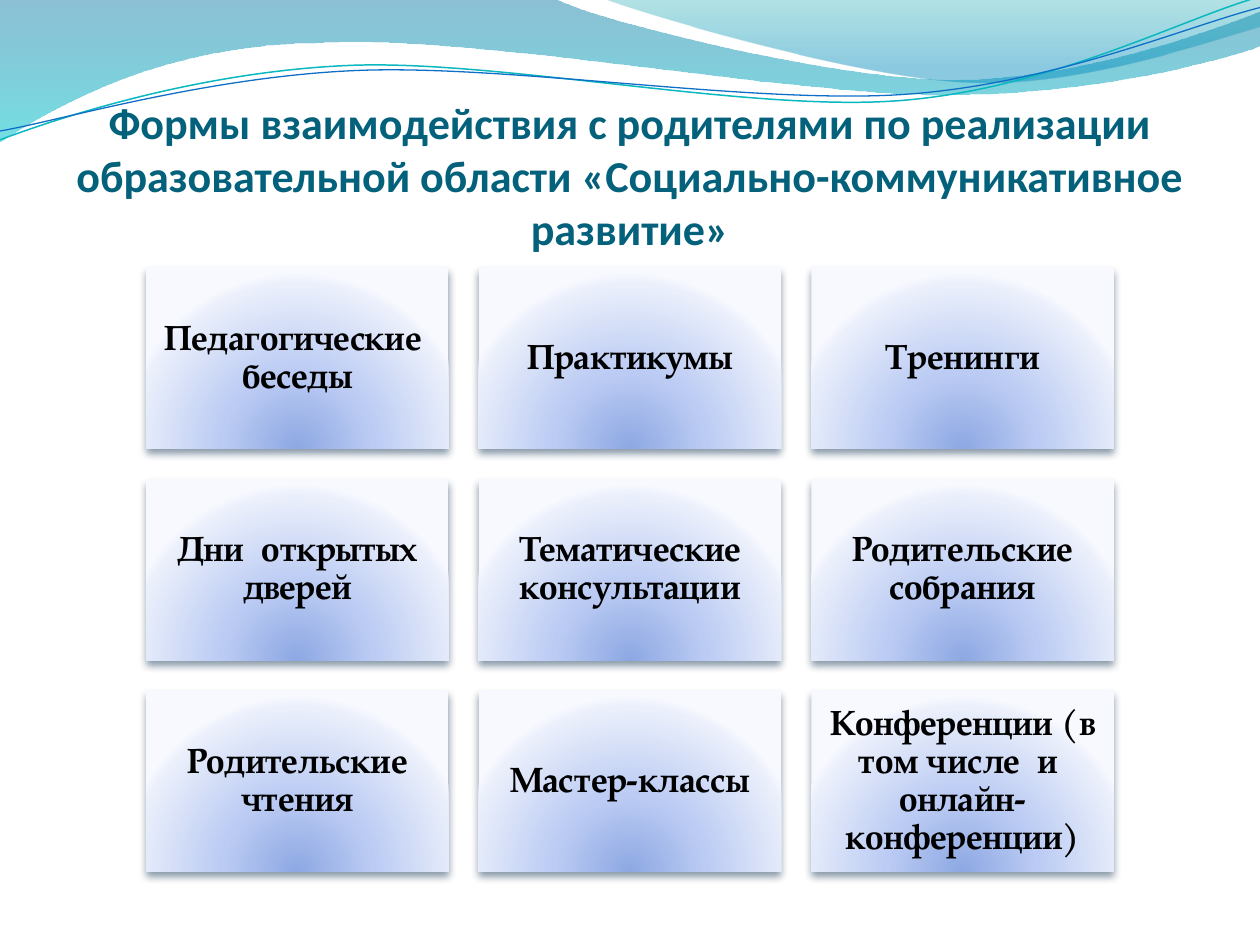
"""Build a slide of nine forms of cooperation with parents under a wave banner."""
import lxml.etree
import pptx
import pptx.dml.color
import pptx.enum.shapes
import pptx.enum.text
import pptx.oxml
import pptx.oxml.ns
import pptx.util

Inches = pptx.util.Inches
Pt = pptx.util.Pt
qn = pptx.oxml.ns.qn

TITLE = ("Формы взаимодействия с родителями по реализации образовательной "
         "области «Социально-коммуникативное развитие»")
FORMS = [
    ["Педагогические  беседы", "Практикумы", "Тренинги"],
    ["Дни  открытых дверей", "Тематические консультации", "Родительские собрания"],
    ["Родительские чтения", "Мастер-классы",
     "Конференции (в том числе  и  онлайн-конференции)"],
]
TITLE_FORMAT = {"name": "Calibri", "size": Pt(25.2), "bold": True}
CARD_FORMAT = {"name": "TeX Gyre Pagella", "size": Pt(20), "bold": True}
CARD_STOPS = [(0, "8DA8E3", 100), (43, "BBCBF3", 100),
              (93, "EAEFFB", 100), (100, "F7F9FF", 100)]
DOWNWARD = ("lin", {"ang": "5400000", "scaled": "0"})

WAVES = [
    ([(0, -0.01), (4.4, -0.01), (4.76, 0.17, 6.64, 0.63, 7.58, 0.63),
      (8.53, 0.63, 9.58, 0.26, 10, 0.09), (10.01, 0.36),
      (9.83, 0.44, 8.7, 0.76, 7.46, 0.75), (6.22, 0.75, 3.82, 0.28, 2.57, 0.34),
      (1.29, 0.35, 0.46, 0.83, -0.01, 1.13)],
     [(0, "0074A1", 45), (100, "00C6CF", 55)]),
    ([(4.79, -0.01), (5.09, 0.11, 6.82, 0.62, 7.69, 0.65),
      (8.56, 0.69, 9.61, 0.32, 10, 0.21), (10, 0)],
     [(0, "00A1A9", 30), (80, "008BBF", 45)]),
]
RIPPLES = [
    ([(0, 1.11), (0.48, 0.93, 1.58, 0.57, 2.77, 0.52),
      (3.95, 0.47, 5.93, 0.89, 7.13, 0.8), (8.33, 0.71, 9.38, 0.15, 9.98, -0.02)],
     "0AB8BF", 0.85),
    ([(0, 1.04), (0.47, 0.96, 1.64, 0.61, 2.83, 0.56),
      (4.03, 0.51, 5.97, 0.83, 7.17, 0.75), (8.36, 0.67, 9.41, 0.21, 10, 0.06)],
     "0F6FC6", 0.75),
]


def color(hex_string):
    """Return the RGB colour for a hex string."""
    return pptx.dml.color.RGBColor.from_string(hex_string)


def add_color(parent, hex_string, opacity):
    """Append a colour with its opacity in percent to an XML element."""
    shade = lxml.etree.SubElement(parent, qn("a:srgbClr"), val=hex_string)
    if opacity < 100:
        lxml.etree.SubElement(shade, qn("a:alpha"), val=str(opacity * 1000))


def fill_gradient(shape, stops, direction, attributes):
    """Fill a shape with gradient stops running in the given direction."""
    shape.fill.background()
    properties = shape.element.spPr
    gradient = pptx.oxml.parse_xml(
        f'<a:gradFill {pptx.oxml.ns.nsdecls("a")} rotWithShape="1"/>')
    stop_list = lxml.etree.SubElement(gradient, qn("a:gsLst"))
    for position, hex_string, opacity in stops:
        stop = lxml.etree.SubElement(stop_list, qn("a:gs"), pos=str(position * 1000))
        add_color(stop, hex_string, opacity)
    way = lxml.etree.SubElement(gradient, qn(f"a:{direction}"), attributes)
    if direction != "lin":
        lxml.etree.SubElement(way, qn("a:fillToRect"),
                              l="50000", t="130000", r="50000", b="-30000")
    properties.replace(properties.find(qn("a:noFill")), gradient)


def bend(outline, segments):
    """Turn the straight steps of an outline into cubic curves where given."""
    steps = list(outline.element.spPr.iter(qn("a:lnTo")))
    for step, segment in zip(steps, segments):
        if len(segment) == 2:
            continue
        curve = lxml.etree.Element(qn("a:cubicBezTo"))
        for x, y in zip(segment[::2], segment[1::2]):
            lxml.etree.SubElement(curve, qn("a:pt"),
                                  x=str(Inches(x) - outline.left),
                                  y=str(Inches(y) - outline.top))
        step.getparent().replace(step, curve)


def add_outline(slide, segments, close):
    """Add a freeform that follows the segments."""
    start, *rest = [(Inches(segment[-2]), Inches(segment[-1])) for segment in segments]
    builder = slide.shapes.build_freeform(*start)
    builder.add_line_segments(rest, close=close)
    outline = builder.convert_to_shape()
    bend(outline, segments[1:])
    outline.shadow.inherit = False
    return outline


def add_wave(slide, segments, stops):
    """Add a translucent wave of the banner."""
    wave = add_outline(slide, segments, True)
    wave.line.fill.background()
    fill_gradient(wave, stops, *DOWNWARD)


def add_ripple(slide, segments, hex_string, width):
    """Add a thin curved line of the banner."""
    ripple = add_outline(slide, segments, False)
    ripple.fill.background()
    ripple.line.color.rgb = color(hex_string)
    ripple.line.width = Pt(width)


def write(shape, text, text_format, hex_string, anchor, insets):
    """Write one centred paragraph into a shape."""
    frame = shape.text_frame
    frame.word_wrap = True
    frame.vertical_anchor = anchor
    for side, inset in zip(("left", "top", "right", "bottom"), insets):
        setattr(frame, f"margin_{side}", Inches(inset))
    paragraph = frame.paragraphs[0]
    paragraph.alignment = pptx.enum.text.PP_ALIGN.CENTER
    run = paragraph.add_run()
    run.text = text
    for attribute, value in text_format.items():
        setattr(run.font, attribute, value)
    run.font.color.rgb = color(hex_string)
    return paragraph


def add_title(slide):
    """Add the slide title."""
    title = slide.shapes.add_textbox(Inches(0.5), Inches(0.77), Inches(9), Inches(1.25))
    write(title, TITLE, TITLE_FORMAT, "04617B",
          pptx.enum.text.MSO_ANCHOR.BOTTOM, (0, 0.05, 0, 0))


def add_card(slide, left, top, text):
    """Add a shaded card naming one form of cooperation."""
    card = slide.shapes.add_shape(pptx.enum.shapes.MSO_SHAPE.RECTANGLE,
                                  Inches(left), Inches(top), Inches(2.4), Inches(1.44))
    card.line.fill.background()
    fill_gradient(card, CARD_STOPS, "path", {"path": "circle"})
    card.shadow.inherit = False
    shadow = lxml.etree.SubElement(
        card.element.spPr.find(qn("a:effectLst")), qn("a:outerShdw"),
        blurRad=str(Pt(4.5)), dist=str(Pt(3)), dir="5400000", rotWithShape="0")
    add_color(shadow, "042747", 48)
    paragraph = write(card, text, CARD_FORMAT, "000000",
                      pptx.enum.text.MSO_ANCHOR.MIDDLE, [0.08] * 4)
    paragraph.line_spacing = 0.9


def main():
    """Build and save the slide."""
    deck = pptx.Presentation()
    deck.slide_width, deck.slide_height = Inches(10), Inches(7.5)
    slide = deck.slides.add_slide(deck.slide_layouts[6])
    for wave in WAVES:
        add_wave(slide, *wave)
    for ripple in RIPPLES:
        add_ripple(slide, *ripple)
    add_title(slide)
    for row, names in enumerate(FORMS):
        for column, name in enumerate(names):
            add_card(slide, 1.16 + 2.64 * column, 2.12 + 1.68 * row, name)
    deck.save("out.pptx")


if __name__ == "__main__":
    main()
